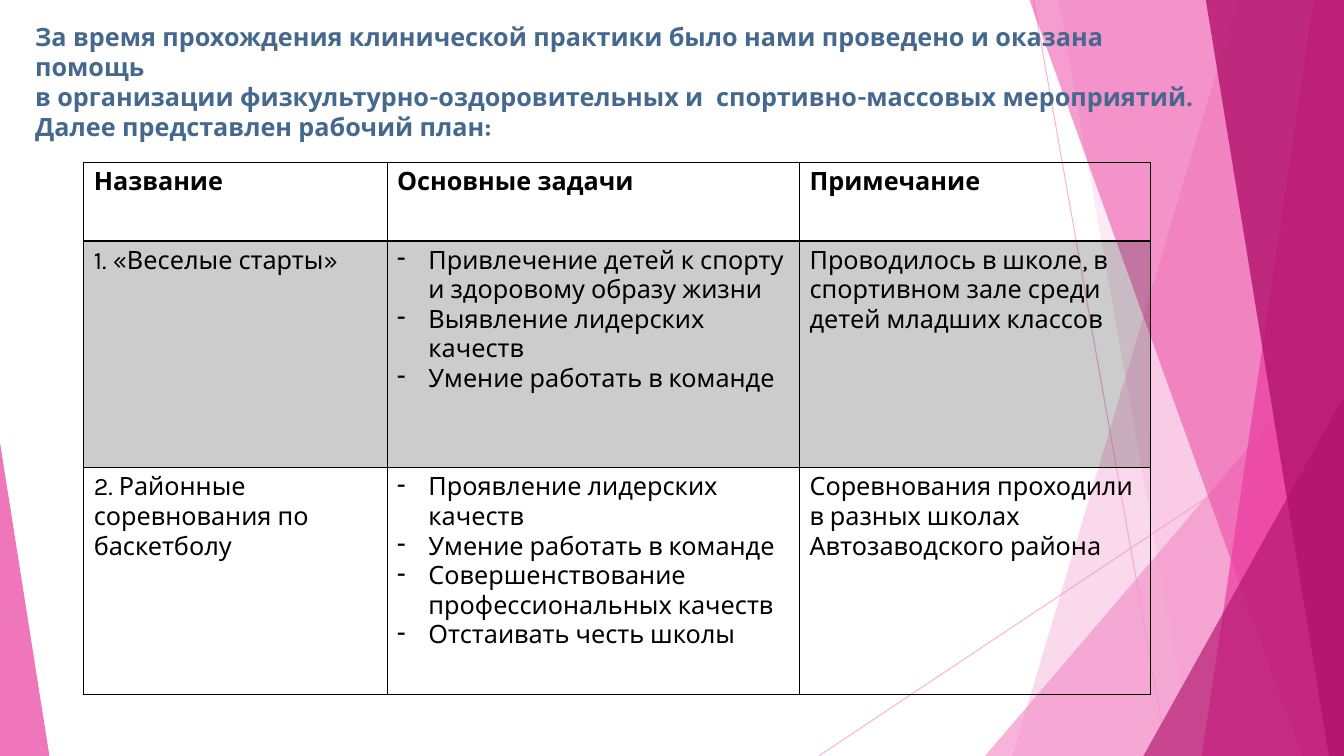
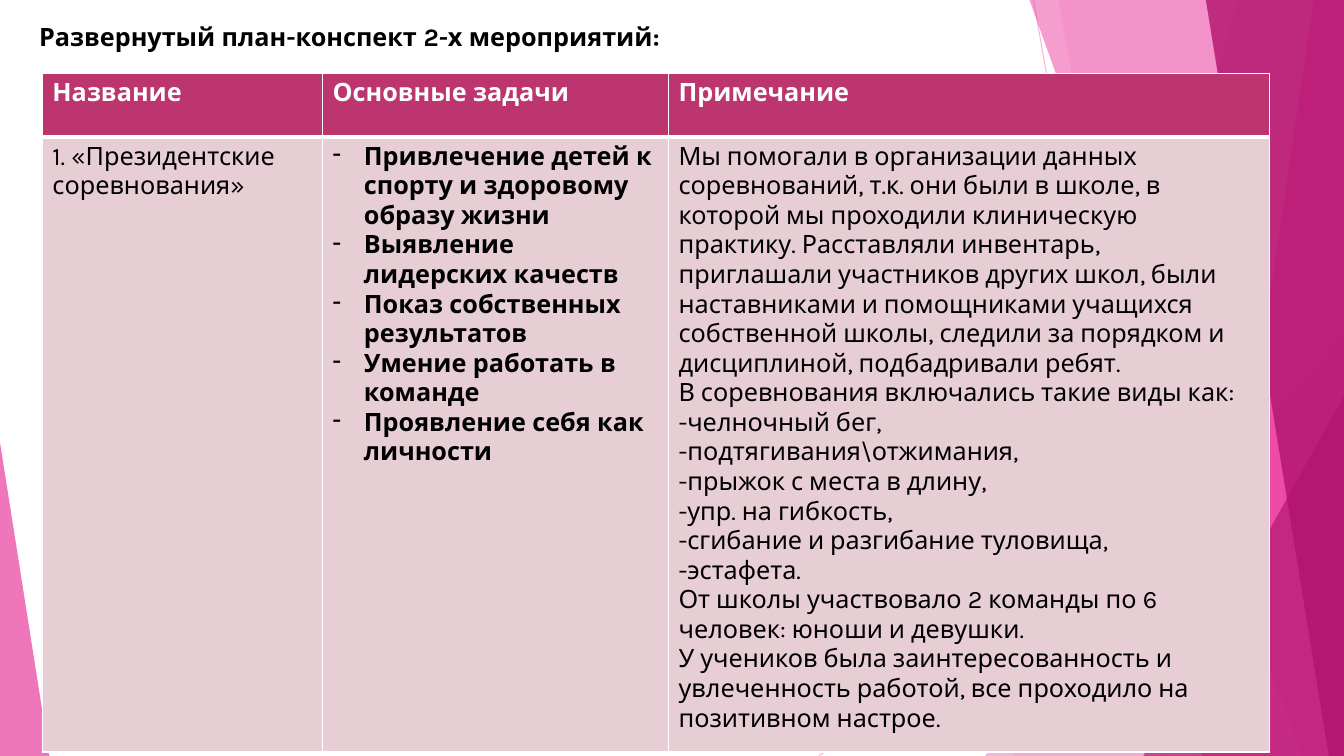
from dataclasses import dataclass

from lxml.etree import SubElement
from pptx import Presentation
from pptx.dml.color import RGBColor
from pptx.enum.shapes import MSO_CONNECTOR, MSO_SHAPE
from pptx.oxml.ns import qn
from pptx.util import Inches, Pt

COLORS = {
    "light": "F496CB",
    "pink": "EB3D9F",
    "deep": "B2136D",
    "header": "BC356F",
    "body": "E7CED5",
    "heading": "45688E",
    "black": "000000",
    "white": "FFFFFF",
}
FONT = "Karla"
TEXT_SIZE = 18
WIDTH, HEIGHT = 13.33, 7.5
HANGING = 0.31
PLAIN_TABLE_STYLE = "{2D5ABB26-0587-4C30-8999-92F81FD0307C}"


@dataclass
class Ray:
    start: tuple[float, float]
    end: tuple[float, float]


@dataclass
class Band:
    """A band from a slanted left edge to the right side of the page."""
    top_x: float
    bottom_x: float
    color: str
    opacity: int


@dataclass
class Corner:
    """A right triangle standing on the bottom edge of the page."""
    left: float
    top: float
    width: float
    apex: float
    color: str
    opacity: int


@dataclass
class Entry:
    lines: list[str]
    bulleted: bool = False
    bold: bool = False
    color: str = "black"


@dataclass
class Row:
    height: float
    entries: list[Entry]
    fill: str | None = None
    opacity: int = 100


@dataclass
class Plan:
    left: float
    top: float
    columns: list[float]
    rows: list[Row]
    border: str
    header_rule: float


DECORATION = [
    Ray((10.25, 0), (11.58, HEIGHT)),
    Ray((WIDTH, 4.03), (8.12, HEIGHT)),
    Band(12.28, 10.04, "light", 36),
    Band(10.5, 11.83, "light", 20),
    Corner(9.77, 3.33, 3.56, 1, "light", 72),
    Band(10.21, 12.91, "pink", 50),
    Band(13.03, 11.92, "pink", 70),
    Band(11.96, 13.18, "deep", 80),
    Corner(11.34, 3.93, 1.99, 1, "deep", 66),
    Corner(0, 4.39, 0.49, 0, "pink", 70),
]


def rgb(name: str) -> RGBColor:
    return RGBColor.from_string(COLORS[name])


def set_opacity(element, percent: int) -> None:
    color = next(element.iter(qn("a:srgbClr")))
    SubElement(color, qn("a:alpha"), val=str(percent * 1000))


def paint(shape, color: str, opacity: int) -> None:
    shape.shadow.inherit = False
    shape.fill.solid()
    shape.fill.fore_color.rgb = rgb(color)
    set_opacity(shape.element.spPr, opacity)
    shape.line.fill.background()


def draw_part(page, part: Ray | Band | Corner):
    if isinstance(part, Ray):
        ends = [Inches(value) for value in (*part.start, *part.end)]
        line = page.shapes.add_connector(MSO_CONNECTOR.STRAIGHT, *ends)
        line.line.color.rgb = rgb("light")
        line.line.width = Pt(0.75)
        set_opacity(line.element.spPr, 70)
        SubElement(line.element.spPr, qn("a:effectLst"))
        return line
    if isinstance(part, Band):
        outline = page.shapes.build_freeform(Inches(part.top_x), 0)
        corners = [(WIDTH, 0), (WIDTH, HEIGHT), (part.bottom_x, HEIGHT)]
        outline.add_line_segments([(Inches(x), Inches(y)) for x, y in corners])
        shape = outline.convert_to_shape()
    else:
        shape = page.shapes.add_shape(
            MSO_SHAPE.ISOSCELES_TRIANGLE, Inches(part.left), Inches(part.top),
            Inches(part.width), Inches(HEIGHT - part.top))
        shape.adjustments[0] = part.apex
    paint(shape, part.color, part.opacity)
    return shape


def decorate_layout(layout, page) -> None:
    """Give the layout the shared decoration, drawn by way of one page."""
    for placeholder in list(layout.placeholders):
        layout.shapes.element.remove(placeholder.element)
    for part in DECORATION:
        layout.shapes.element.append(draw_part(page, part).element)


def write(frame, entry: Entry) -> None:
    frame.word_wrap = True
    for index, line in enumerate(entry.lines):
        para = frame.add_paragraph() if index else frame.paragraphs[0]
        para.text = line
        para.font.name = FONT
        para.font.size = Pt(TEXT_SIZE)
        para.font.bold = entry.bold
        para.font.color.rgb = rgb(entry.color)
        if entry.bulleted:
            properties = para.font._element.getparent()
            properties.set("marL", str(Inches(HANGING)))
            properties.set("indent", str(-Inches(HANGING)))
            bullet = SubElement(properties, qn("a:buChar"), char="-")
            para.font._element.addprevious(bullet)


def add_heading(page, left: float, width: float, height: float, entry: Entry) -> None:
    box = page.shapes.add_textbox(Inches(left), Inches(0.16), Inches(width), Inches(height))
    write(box.text_frame, entry)


def set_borders(cell, color: str, top: float, bottom: float) -> None:
    properties = cell._tc.get_or_add_tcPr()
    sides = {"a:lnL": 1, "a:lnR": 1, "a:lnT": top, "a:lnB": bottom}
    for position, (side, width) in enumerate(sides.items()):
        line = SubElement(properties, qn(side), w=str(Pt(width)))
        fill = SubElement(line, qn("a:solidFill"))
        SubElement(fill, qn("a:srgbClr"), val=COLORS[color])
        properties.insert(position, line)


def add_plan(page, plan: Plan) -> None:
    frame = page.shapes.add_table(
        len(plan.rows), len(plan.columns), Inches(plan.left), Inches(plan.top),
        Inches(sum(plan.columns)), Inches(sum(row.height for row in plan.rows)))
    next(frame.element.iter(qn("a:tableStyleId"))).text = PLAIN_TABLE_STYLE
    table = frame.table
    table.horz_banding = False
    for column, width in zip(table.columns, plan.columns):
        column.width = Inches(width)
    for row_index, row in enumerate(plan.rows):
        table.rows[row_index].height = Inches(row.height)
        top = plan.header_rule if row_index == 1 else 1
        bottom = plan.header_rule if row_index == 0 else 1
        for column_index, entry in enumerate(row.entries):
            cell = table.cell(row_index, column_index)
            write(cell.text_frame, entry)
            if row.fill:
                cell.fill.solid()
                cell.fill.fore_color.rgb = rgb(row.fill)
                if row.opacity < 100:
                    set_opacity(cell._tc.tcPr, row.opacity)
            else:
                cell.fill.background()
            set_borders(cell, plan.border, top, bottom)


def header(height: float, color: str, fill: str | None = None) -> Row:
    names = ["Название", "Основные задачи", "Примечание"]
    return Row(height, [Entry([name], bold=True, color=color) for name in names], fill)


WORK_PLAN = Plan(0.83, 1.61, [3.01, 4.09, 3.48], [
    header(0.78, "black"),
    Row(2.25, [
        Entry(["1. «Веселые старты»"]),
        Entry(["Привлечение детей к спорту и здоровому образу жизни",
               "Выявление лидерских качеств",
               "Умение работать в команде"], bulleted=True),
        Entry(["Проводилось в школе, в спортивном зале среди детей младших классов"]),
    ], "black", 20),
    Row(2.25, [
        Entry(["2. Районные соревнования по баскетболу"]),
        Entry(["Проявление лидерских качеств",
               "Умение работать в команде",
               "Совершенствование профессиональных качеств",
               "Отстаивать честь школы"], bulleted=True),
        Entry(["Соревнования проходили в разных школах Автозаводского района"]),
    ]),
], "black", 2)

DETAILED_PLAN = Plan(0.42, 0.73, [2.78, 3.43, 5.96], [
    header(0.63, "white", "header"),
    Row(6.1, [
        Entry(["1. «Президентские соревнования»"]),
        Entry(["Привлечение детей к спорту и здоровому образу жизни",
               "Выявление лидерских качеств",
               "Показ собственных результатов",
               "Умение работать в команде",
               "Проявление себя как личности"], bulleted=True, bold=True),
        Entry(["Мы помогали в организации данных соревнований, т.к. они были в школе, "
               "в которой мы проходили клиническую практику. Расставляли инвентарь, "
               "приглашали участников других школ, были наставниками и помощниками "
               "учащихся собственной школы, следили за порядком и дисциплиной, "
               "подбадривали ребят.",
               "В соревнования включались такие виды как:",
               "-челночный бег,",
               "-подтягивания\\отжимания,",
               "-прыжок с места в длину,",
               "-упр. на гибкость,",
               "-сгибание и разгибание туловища,",
               "-эстафета.",
               "От школы участвовало 2 команды по 6 человек: юноши и девушки.",
               "У учеников была заинтересованность и увлеченность работой, "
               "все проходило на позитивном настрое."]),
    ], "body"),
], "white", 3)


def main() -> None:
    deck = Presentation()
    deck.slide_width, deck.slide_height = Inches(WIDTH), Inches(HEIGHT)
    blank = deck.slide_layouts[6]

    # Work plan
    page = deck.slides.add_slide(blank)
    decorate_layout(blank, page)
    add_heading(page, 0.25, 11.89, 1.01, Entry([
        "За время прохождения клинической практики было нами проведено и оказана помощь",
        "в организации физкультурно-оздоровительных и  спортивно-массовых мероприятий.",
        "Далее представлен рабочий план:"], bold=True, color="heading"))
    add_plan(page, WORK_PLAN)

    # Detailed plan
    page = deck.slides.add_slide(blank)
    add_heading(page, 0.29, 6.5, 0.4,
                Entry(["Развернутый план-конспект 2-х мероприятий:"], bold=True))
    add_plan(page, DETAILED_PLAN)

    deck.save("out.pptx")


if __name__ == "__main__":
    main()
